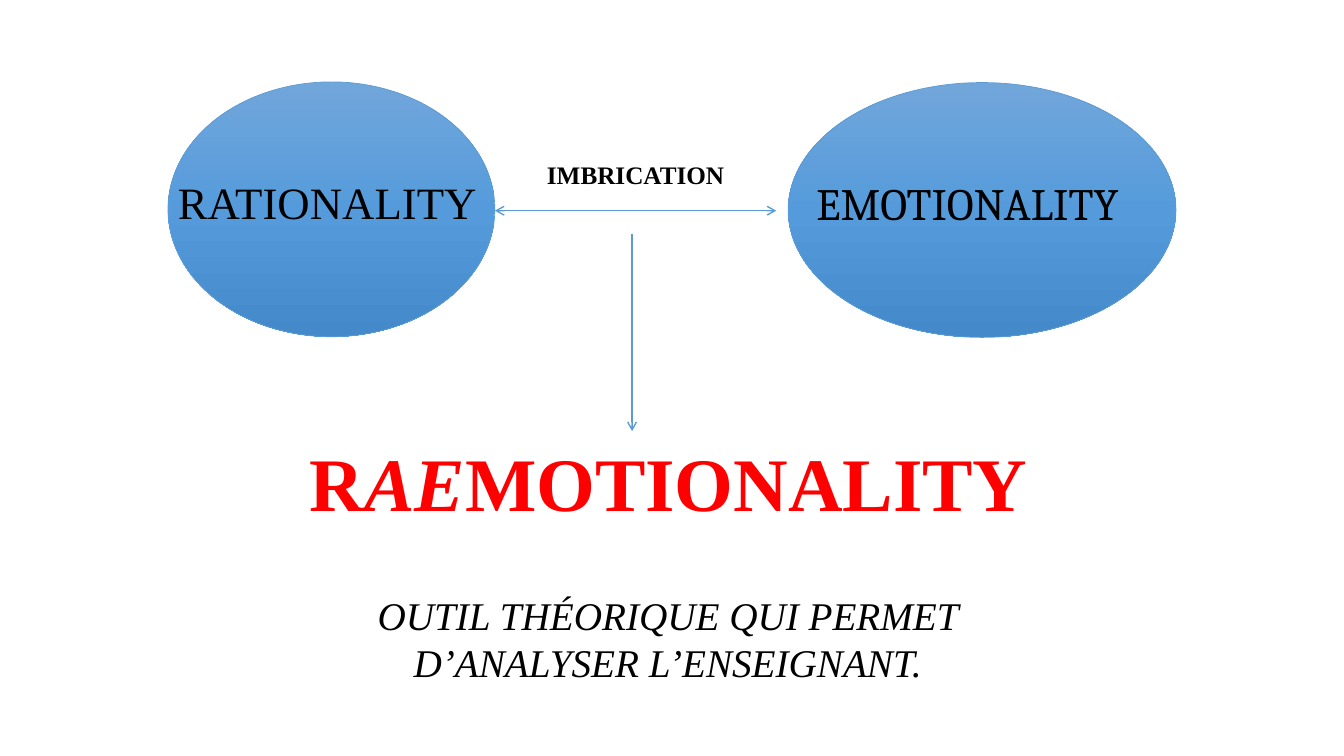
from copy import deepcopy
from dataclasses import dataclass

from pptx import Presentation
from pptx.dml.color import RGBColor
from pptx.enum.shapes import MSO_CONNECTOR, MSO_SHAPE
from pptx.enum.text import MSO_ANCHOR, MSO_AUTO_SIZE, PP_ALIGN
from pptx.oxml.ns import qn
from pptx.oxml.xmlchemy import OxmlElement
from pptx.shapes.base import BaseShape
from pptx.slide import Slide
from pptx.util import Pt

BLACK = RGBColor(0x00, 0x00, 0x00)
RED = RGBColor(0xFF, 0x00, 0x00)
BLUE = RGBColor(0x5B, 0x9B, 0xD5)
GRADIENT = (
    (0, RGBColor(0x71, 0xA6, 0xDB)),
    (0.5, RGBColor(0x55, 0x9B, 0xDB)),
    (1, RGBColor(0x44, 0x8A, 0xCA)),
)
SERIF = "Times New Roman"


@dataclass(frozen=True)
class Box:
    left: float
    top: float
    width: float
    height: float


@dataclass(frozen=True)
class Run:
    text: str
    size: float
    font: str = SERIF
    color: RGBColor = BLACK
    bold: bool = False
    italic: bool = False


@dataclass(frozen=True)
class Label:
    box: Box
    run: Run
    alignment: PP_ALIGN = PP_ALIGN.CENTER


@dataclass(frozen=True)
class Arrow:
    start: tuple[float, float]
    end: tuple[float, float]
    both_ends: bool = False


TITLE_BOX = Box(214, 308, 551, 73)
TITLE_RUNS = (
    Run("R", 54, color=RED, bold=True),
    Run("AE", 54, color=RED, bold=True, italic=True),
    Run("MOTIONALITY", 54, color=RED, bold=True),
)
ELLIPSES = (Box(120, 58.5, 233.5, 182), Box(563, 59, 277, 182))
ARROWS = (
    Arrow((451.5, 167), (451.5, 308)),
    Arrow((353.5, 150.5), (554.5, 150.5), both_ends=True),
)
LABELS = (
    Label(Box(120, 121, 233.5, 46), Run("RATIONALITY", 32), PP_ALIGN.LEFT),
    Label(Box(576, 122, 265, 46), Run("EMOTIONALITY", 32, "Cambria"), PP_ALIGN.LEFT),
    Label(Box(353.5, 110, 201, 29), Run("IMBRICATION", 18, bold=True)),
    Label(
        Box(214, 419, 526, 75),
        Run("OUTIL THÉORIQUE QUI PERMET D’ANALYSER L’ENSEIGNANT.", 28, italic=True),
    ),
)


def lengths(box: Box) -> tuple[Pt, Pt, Pt, Pt]:
    return Pt(box.left), Pt(box.top), Pt(box.width), Pt(box.height)


def write_text(shape: BaseShape, runs: tuple[Run, ...], alignment: PP_ALIGN) -> None:
    frame = shape.text_frame
    frame.word_wrap = True
    frame.auto_size = MSO_AUTO_SIZE.NONE
    frame.vertical_anchor = MSO_ANCHOR.TOP
    paragraph = frame.paragraphs[0]
    paragraph.alignment = alignment
    for item in runs:
        run = paragraph.add_run()
        run.text = item.text
        run.font.name = item.font
        run.font.size = Pt(item.size)
        run.font.color.rgb = item.color
        run.font.bold = item.bold
        run.font.italic = item.italic


def draw_title(slide: Slide) -> None:
    title = slide.shapes.title
    title.left, title.top, title.width, title.height = lengths(TITLE_BOX)
    write_text(title, TITLE_RUNS, PP_ALIGN.LEFT)


def draw_ellipse(slide: Slide, box: Box) -> None:
    ellipse = slide.shapes.add_shape(MSO_SHAPE.OVAL, *lengths(box))
    ellipse.shadow.inherit = False
    ellipse.line.color.rgb = BLUE
    ellipse.line.width = Pt(0.5)
    ellipse.fill.gradient()
    ellipse.fill.gradient_angle = 270
    first_stop = next(ellipse._element.spPr.iter(qn("a:gs")))
    first_stop.addnext(deepcopy(first_stop))
    for stop, (position, color) in zip(ellipse.fill.gradient_stops, GRADIENT):
        stop.position = position
        stop.color.rgb = color


def draw_label(slide: Slide, label: Label) -> None:
    text_box = slide.shapes.add_textbox(*lengths(label.box))
    write_text(text_box, (label.run,), label.alignment)


def draw_arrow(slide: Slide, arrow: Arrow) -> None:
    points = (Pt(value) for value in (*arrow.start, *arrow.end))
    connector = slide.shapes.add_connector(MSO_CONNECTOR.STRAIGHT, *points)
    connector.line.color.rgb = BLUE
    connector.line.width = Pt(1)
    line = connector.line._get_or_add_ln()
    for tag in ("a:headEnd", "a:tailEnd") if arrow.both_ends else ("a:tailEnd",):
        arrowhead = OxmlElement(tag)
        arrowhead.set("type", "arrow")
        line.append(arrowhead)
    connector._element.spPr.append(OxmlElement("a:effectLst"))


def main() -> None:
    presentation = Presentation()
    presentation.slide_width = Pt(960)
    presentation.slide_height = Pt(540)
    slide = presentation.slides.add_slide(presentation.slide_layouts.get_by_name("Title Only"))
    draw_title(slide)
    for box in ELLIPSES:
        draw_ellipse(slide, box)
    for arrow in ARROWS:
        draw_arrow(slide, arrow)
    for label in LABELS:
        draw_label(slide, label)
    presentation.save("out.pptx")


if __name__ == "__main__":
    main()
